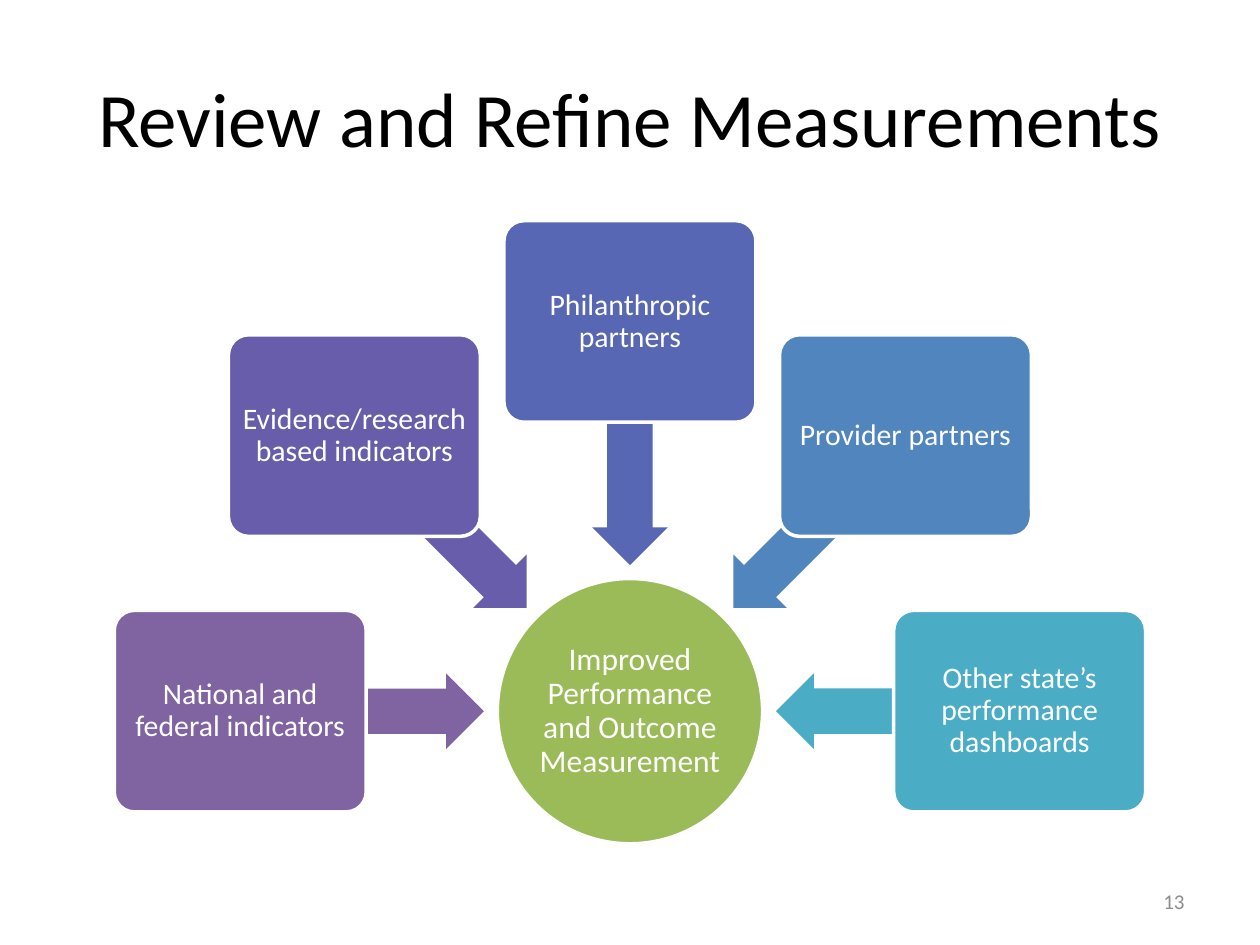
from math import cos, radians, sin

from pptx import Presentation
from pptx.dml.color import RGBColor
from pptx.enum.shapes import MSO_SHAPE as SHAPE
from pptx.enum.text import MSO_ANCHOR as ANCHOR, PP_ALIGN as ALIGN
from pptx.util import Pt

TITLE = "Review and Refine Measurements"
HUB = "Improved Performance and Outcome Measurement"
PAGE = "13"
SOURCES = [
    ("National and federal indicators", "8064A2"),
    ("Evidence/research based indicators", "685DAB"),
    ("Philanthropic partners", "5767B4"),
    ("Provider partners", "5185BD"),
    ("Other state’s performance dashboards", "4BACC6"),
]
FONT, WHITE, GREEN = "Calibri", "FFFFFF", "9BBB59"
CX, CY, HUB_SIZE = 360, 406.4, 151.6
BOX_W, BOX_H, BOX_RADIUS = 144, 115.2, 222.7
ARROW_W, ARROW_H, ARROW_RADIUS = 139, 43.2, 153


def rgb(color):
    return RGBColor.from_string(color)


def set_text(sp, text, size, color, align=ALIGN.CENTER, inset=None, spacing=None):
    tf = sp.text_frame
    tf.text = text
    tf.word_wrap = True
    tf.vertical_anchor = ANCHOR.MIDDLE
    if inset is not None:
        tf.margin_left = tf.margin_right = tf.margin_top = tf.margin_bottom = Pt(inset)
    p = tf.paragraphs[0]
    p.alignment = align
    if spacing:
        p.line_spacing = spacing
    font = p.runs[0].font
    font.name, font.size = FONT, Pt(size)
    font.color.rgb = rgb(color)


def add_centred(slide, kind, x, y, w, h, fill, outlined=True):
    sp = slide.shapes.add_shape(kind, Pt(x - w / 2), Pt(y - h / 2), Pt(w), Pt(h))
    sp.shadow.inherit = False
    sp.fill.solid()
    sp.fill.fore_color.rgb = rgb(fill)
    if outlined:
        sp.line.color.rgb = rgb(WHITE)
        sp.line.width = Pt(2)
    else:
        sp.line.fill.background()
    return sp


def add_source(slide, text, color, angle):
    dx, dy = cos(radians(angle)), -sin(radians(angle))
    arrow = add_centred(slide, SHAPE.LEFT_ARROW, CX + ARROW_RADIUS * dx,
                        CY + ARROW_RADIUS * dy, ARROW_W, ARROW_H, color, outlined=False)
    arrow.adjustments[0] = 0.6
    arrow.adjustments[1] = 0.5
    arrow.rotation = -angle % 360
    box = add_centred(slide, SHAPE.ROUNDED_RECTANGLE, CX + BOX_RADIUS * dx,
                      CY + BOX_RADIUS * dy, BOX_W, BOX_H, color)
    box.adjustments[0] = 0.1
    set_text(box, text, 17, WHITE, inset=3, spacing=0.9)


def main():
    prs = Presentation()
    prs.slide_width, prs.slide_height = Pt(720), Pt(540)
    slide = prs.slides.add_slide(prs.slide_layouts[5])

    title = slide.shapes.title
    title.left, title.top, title.width, title.height = Pt(36), Pt(21.6), Pt(648), Pt(90)
    set_text(title, TITLE, 44, "000000")

    hub = add_centred(slide, SHAPE.OVAL, CX, CY, HUB_SIZE, HUB_SIZE, GREEN)
    set_text(hub, HUB, 18, WHITE, inset=1, spacing=0.9)

    step = 180 / (len(SOURCES) - 1)
    for i, (text, color) in enumerate(SOURCES):
        add_source(slide, text, color, 180 - i * step)

    number = slide.shapes.add_textbox(Pt(516), Pt(500.5), Pt(168), Pt(28.8))
    set_text(number, PAGE, 12, "8C8C8C", ALIGN.RIGHT)
    prs.save("out.pptx")


if __name__ == "__main__":
    main()
